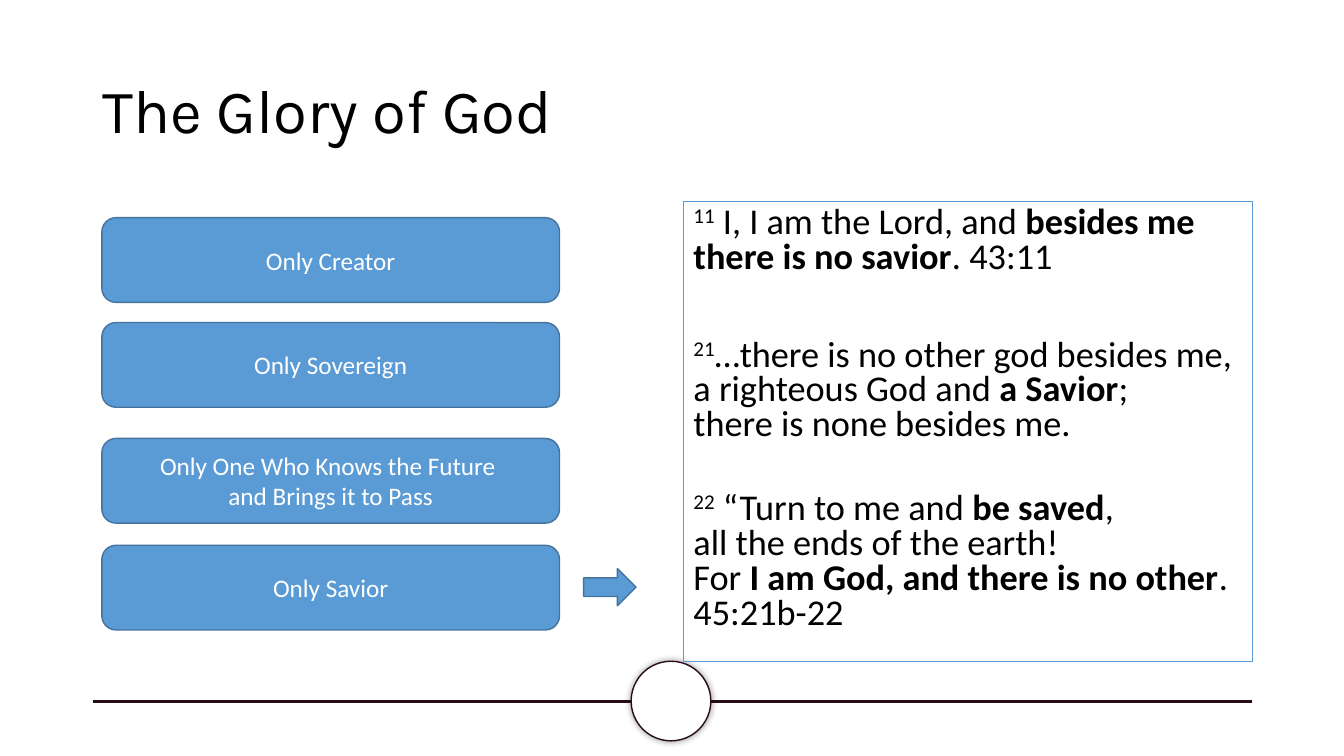
"""Build the slide 'The Glory of God' with four claims and their verses."""
from dataclasses import dataclass

import lxml.etree
import pptx
import pptx.dml.color
import pptx.enum.shapes
import pptx.enum.text
import pptx.oxml
import pptx.oxml.ns
import pptx.util

BLACK = pptx.dml.color.RGBColor(0x00, 0x00, 0x00)
WHITE = pptx.dml.color.RGBColor(0xFF, 0xFF, 0xFF)
BLUE = pptx.dml.color.RGBColor(0x5B, 0x9B, 0xD5)
DARK_BLUE = pptx.dml.color.RGBColor(0x43, 0x73, 0x9E)
MAROON = pptx.dml.color.RGBColor(0x29, 0x0D, 0x15)

SLIDE_WIDTH = pptx.util.Inches(13.33)
SLIDE_HEIGHT = pptx.util.Inches(7.5)
GRID = 100
SHAPES = pptx.enum.shapes.MSO_SHAPE
ANCHORS = pptx.enum.text.MSO_ANCHOR
ALIGNMENTS = pptx.enum.text.PP_ALIGN


@dataclass(frozen=True)
class Area:
    left: float
    top: float
    width: float
    height: float


@dataclass(frozen=True)
class Piece:
    text: str
    bold: bool = False
    raised: bool = False


@dataclass(frozen=True)
class Verse:
    space_before: float
    pieces: tuple[Piece, ...]


@dataclass(frozen=True)
class Claim:
    top: float
    lines: tuple[str, ...]


CLAIMS = (
    Claim(28.8, ("Only Creator",)),
    Claim(42.67, ("Only Sovereign",)),
    Claim(58, ("Only One Who Knows the Future ", "and Brings it to Pass")),
    Claim(72.13, ("Only Savior",)),
)
VERSES = (
    Verse(0, (
        Piece("11", raised=True),
        Piece(" I, I am the Lord, and "),
        Piece("besides me there is no savior", bold=True),
        Piece(". 43:11"),
    )),
    Verse(45, (
        Piece("21", raised=True),
        Piece("…there is no other god besides me, a righteous God and "),
        Piece("a Savior", bold=True),
        Piece(";\nthere is none besides me."),
    )),
    Verse(35, (
        Piece("22", raised=True),
        Piece(" “Turn to me and "),
        Piece("be saved", bold=True),
        Piece(",\nall the ends of the earth!\nFor "),
        Piece("I am God, and there is no other", bold=True),
        Piece(". 45:21b-22"),
    )),
)


def column(position: float) -> int:
    return round(SLIDE_WIDTH * position / GRID)


def row(position: float) -> int:
    return round(SLIDE_HEIGHT * position / GRID)


def place(area: Area) -> tuple[int, int, int, int]:
    return column(area.left), row(area.top), column(area.width), row(area.height)


def add_preset(slide, preset, area: Area, fill, outline, weight: float):
    shape = slide.shapes.add_shape(preset, *place(area))
    shape.shadow.inherit = False
    if fill is None:
        shape.fill.background()
    else:
        shape.fill.solid()
        shape.fill.fore_color.rgb = fill
    shape.line.color.rgb = outline
    shape.line.width = pptx.util.Pt(weight)
    return shape


def add_run(paragraph, piece: Piece, size: float, color, name: str = "Calibri") -> None:
    for index, line in enumerate(piece.text.split("\n")):
        if index:
            paragraph.add_line_break()
        run = paragraph.add_run()
        run.text = line
        run.font.name = name
        run.font.size = pptx.util.Pt(size)
        run.font.bold = piece.bold
        run.font.color.rgb = color
        if piece.raised:
            run.font._element.set("baseline", "30000")


def next_paragraph(frame, index: int):
    return frame.add_paragraph() if index else frame.paragraphs[0]


def add_footer_ornament(slide) -> None:
    rule = slide.shapes.add_connector(
        pptx.enum.shapes.MSO_CONNECTOR.STRAIGHT,
        column(6.9), row(92.8), column(93.17), row(92.8))
    rule.line.color.rgb = MAROON
    rule.line.width = pptx.util.Pt(2.25)
    effects_tag = pptx.oxml.ns.qn("a:effectLst")
    lxml.etree.SubElement(rule._element.spPr, effects_tag)

    circle = add_preset(slide, SHAPES.OVAL, Area(46.96, 87.47, 5.93, 10.53),
                        WHITE, MAROON, 1)
    glow = pptx.oxml.parse_xml(
        f'<a:outerShdw {pptx.oxml.ns.nsdecls("a")} blurRad="63500" dist="0" dir="0">'
        '<a:srgbClr val="000000"><a:alpha val="40000"/></a:srgbClr></a:outerShdw>')
    circle._element.spPr.find(effects_tag).append(glow)


def add_title(slide) -> None:
    frame = slide.shapes.add_textbox(*place(Area(6.9, 5.33, 86.27, 19.33))).text_frame
    frame.word_wrap = True
    frame.vertical_anchor = ANCHORS.MIDDLE
    paragraph = frame.paragraphs[0]
    paragraph.line_spacing = 0.9
    add_run(paragraph, Piece("The Glory of God"), 44, BLACK, "Karla")


def add_verses(slide) -> None:
    box = add_preset(slide, SHAPES.RECTANGLE, Area(50.86, 26.67, 42.31, 60.8),
                     None, BLUE, 0.75)
    frame = box.text_frame
    frame.word_wrap = True
    frame.vertical_anchor = ANCHORS.TOP
    for index, verse in enumerate(VERSES):
        paragraph = next_paragraph(frame, index)
        paragraph.alignment = ALIGNMENTS.LEFT
        paragraph.line_spacing = 0.8
        paragraph.space_before = pptx.util.Pt(verse.space_before)
        for piece in verse.pieces:
            add_run(paragraph, piece, 25.9, BLACK)


def add_claim(slide, claim: Claim) -> None:
    box = add_preset(slide, SHAPES.ROUNDED_RECTANGLE,
                     Area(7.58, claim.top, 34.05, 11.2), BLUE, DARK_BLUE, 1)
    frame = box.text_frame
    frame.word_wrap = True
    frame.vertical_anchor = ANCHORS.MIDDLE
    for index, line in enumerate(claim.lines):
        paragraph = next_paragraph(frame, index)
        paragraph.alignment = ALIGNMENTS.CENTER
        add_run(paragraph, Piece(line), 18, WHITE)


def main() -> None:
    presentation = pptx.Presentation()
    presentation.slide_width = SLIDE_WIDTH
    presentation.slide_height = SLIDE_HEIGHT
    slide = presentation.slides.add_slide(presentation.slide_layouts[6])
    add_footer_ornament(slide)
    add_title(slide)
    add_verses(slide)
    for claim in CLAIMS:
        add_claim(slide, claim)
    add_preset(slide, SHAPES.RIGHT_ARROW, Area(43.43, 75.2, 3.9, 4.93),
               BLUE, DARK_BLUE, 1)
    presentation.save("out.pptx")


if __name__ == "__main__":
    main()
